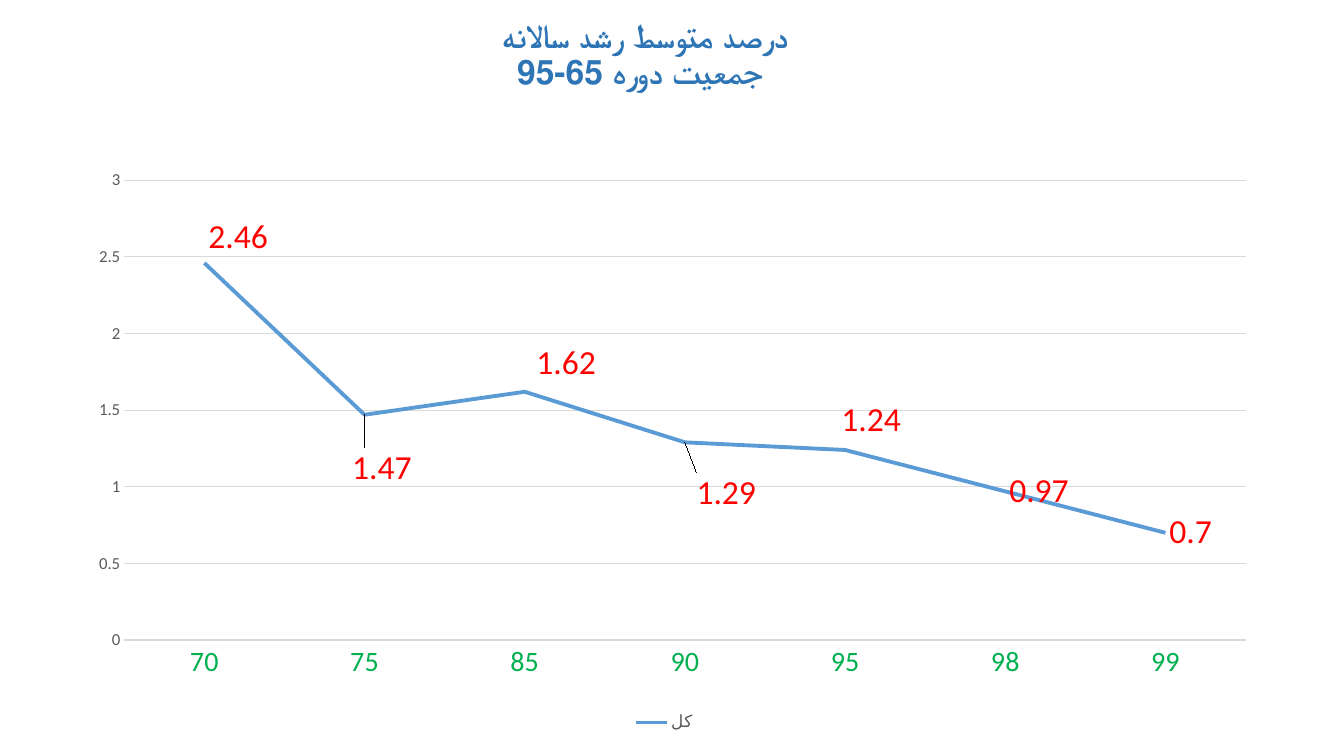
from copy import deepcopy
from lxml.etree import SubElement
from pptx import Presentation
from pptx.chart.data import CategoryChartData
from pptx.dml.color import RGBColor
from pptx.enum.chart import XL_CHART_TYPE, XL_LABEL_POSITION, XL_LEGEND_POSITION, XL_TICK_MARK
from pptx.enum.text import MSO_ANCHOR, MSO_AUTO_SIZE, PP_ALIGN
from pptx.oxml.ns import qn
from pptx.util import Pt

PX = 914400 / 100.8
HUES = {
    "title": "2E75B6", "line": "5B9BD5", "grid": "D9D9D9",
    "text": "595959", "year": "00B050", "value": "FF0000",
}


def write(frame, text, size, hue, bold=False, align=PP_ALIGN.CENTER):
    para = frame.paragraphs[0]
    para.text = text
    para.alignment = align
    para.line_spacing = 0.9
    para._p.get_or_add_pPr().set("rtl", "1")
    for run in para.runs:
        run.font.name = "Calibri"
        run.font.size = Pt(size)
        run.font.bold = bold
        run.font.color.rgb = RGBColor.from_string(HUES[hue])
    for gap in para._p.findall(qn("a:br")):
        gap.insert(0, deepcopy(para.runs[0]._r.rPr))


def place(node, spot, **parts):
    for old in node.findall(qn("c:layout")):
        node.remove(old)
    layout = SubElement(node, qn("c:layout"))
    node.insert(spot, layout)
    manual = SubElement(layout, qn("c:manualLayout"))
    for key, part in parts.items():
        SubElement(manual, qn("c:" + key)).set("val", str(part))


deck = Presentation()
deck.slide_width, deck.slide_height = round(1344 * PX), round(756 * PX)
slide = deck.slides.add_slide(deck.slide_layouts[5])

title = slide.shapes.title
title.left, title.top, title.width, title.height = [round(n * PX) for n in (267, 29, 756, 68)]
frame = title.text_frame
frame.word_wrap = True
frame.auto_size = MSO_AUTO_SIZE.NONE
frame.vertical_anchor = MSO_ANCHOR.BOTTOM
write(frame, "درصد متوسط رشد سالانه\v جمعیت دوره 65-95", size=24, hue="title", bold=True)

data = CategoryChartData()
data.categories = ["70", "75", "85", "90", "95", "98", "99"]
data.add_series("کل", [2.46, 1.47, 1.62, 1.29, 1.24, 0.97, 0.7])
wide, high = 1270, 611
box = [round(n * PX) for n in (29, 124, wide, high)]
chart = slide.shapes.add_chart(XL_CHART_TYPE.LINE, *box, data).chart
chart.has_title = False
chart.font.name = "Calibri"
chart.font.size = Pt(10)
chart.has_legend = True
chart.legend.position = XL_LEGEND_POSITION.BOTTOM
chart.legend.include_in_layout = False
place(chart._chartSpace.chart.plotArea, 0, layoutTarget="inner", xMode="edge", yMode="edge",
      x=0.075, y=0.092, w=0.883, h=0.753)

years, rates = chart.category_axis, chart.value_axis
for axis in (years, rates):
    axis.major_tick_mark = axis.minor_tick_mark = XL_TICK_MARK.NONE
years.has_major_gridlines = False
rates.has_major_gridlines = True
rates.minimum_scale, rates.maximum_scale, rates.major_unit = 0, 3, 0.5
rates.format.line.fill.background()

plot = chart.plots[0]
plot.vary_by_categories = False
total = plot.series[0]
total.smooth = False
strokes = [
    (years.format.line, "grid", 1),
    (rates.major_gridlines.format.line, "grid", 0.75),
    (total.format.line, "line", 2.75),
]
for line, hue, width in strokes:
    line.color.rgb = RGBColor.from_string(HUES[hue])
    line.width = Pt(width)

labels = total.data_labels
labels.show_value = True
labels.position = XL_LABEL_POSITION.RIGHT
fonts = [
    (years.tick_labels.font, 20, "year"),
    (rates.tick_labels.font, 12, "text"),
    (chart.legend.font, 12, "text"),
    (labels.font, 24, "value"),
]
shifts = [(0, -25), (-16, 54), (8, -28), (8, 51), (-8, -30)]
for i, (dx, dy) in enumerate(shifts):
    label = total.points[i].data_label
    label.position = XL_LABEL_POSITION.RIGHT
    fonts.append((label.font, 24, "value"))
    node = labels._element.findall(qn("c:dLbl"))[i]
    place(node, 1, x=round(dx / wide, 3), y=round(dy / high, 3))
for font, size, hue in fonts:
    font.name = "Calibri"
    font.size = Pt(size)
    font.bold = False
    font.color.rgb = RGBColor.from_string(HUES[hue])

deck.save("out.pptx")
